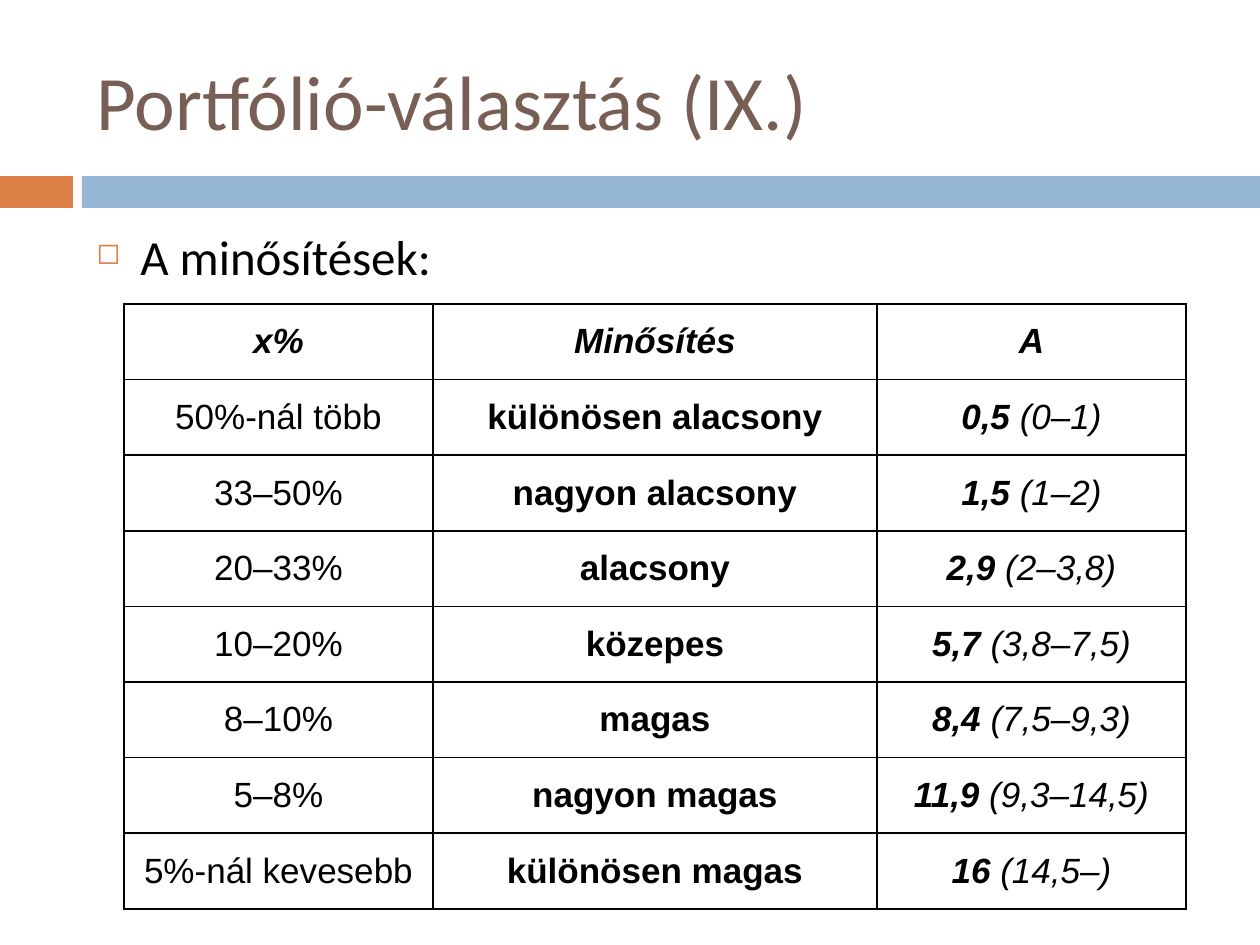
from dataclasses import dataclass
from lxml.etree import SubElement as Sub
from pptx import Presentation
from pptx.dml.color import RGBColor as RGB
from pptx.enum.shapes import MSO_SHAPE as Shape
from pptx.enum.text import MSO_ANCHOR as Anchor, PP_ALIGN as Align
from pptx.oxml.ns import qn
from pptx.util import Emu, Pt


@dataclass(frozen=True)
class Theme:
    orange: str = "DD8047"
    blue: str = "94B6D2"
    brown: str = "775F55"
    black: str = "000000"
    head: str = "Calibri"
    grid: str = "Arial"
    title: int = 44
    body: int = 28
    cell: int = 20


def px(num):
    return Emu(round(num * 914400 / 126))


def style(font, name, size, color):
    font.name = name
    font.size = Pt(size)
    font.color.rgb = RGB.from_string(color)


look = Theme()
deck = Presentation()
deck.slide_width, deck.slide_height = px(1260), px(945)
slide = deck.slides.add_slide(deck.slide_layouts[5])
shapes = slide.shapes

for left, width, color in [(0, 73, look.orange), (82, 1178, look.blue)]:
    bar = shapes.add_shape(Shape.RECTANGLE, px(left), px(176), px(width), px(32))
    bar.shadow.inherit = False
    bar.fill.solid()
    bar.fill.fore_color.rgb = RGB.from_string(color)
    bar.line.fill.background()

title = shapes.title
title.left, title.top, title.width, title.height = px(84), px(32), px(1124), px(136)
title.text_frame.text = "Portfólió-választás (IX.)"
title.text_frame.vertical_anchor = Anchor.MIDDLE
para = title.text_frame.paragraphs[0]
para.alignment = Align.LEFT
style(para.font, look.head, look.title, look.brown)

body = shapes.add_textbox(px(84), px(220), px(1124), px(620))
body.text_frame.word_wrap = True
para = body.text_frame.paragraphs[0]
para.text = "A minősítések:"
para.space_before = Pt(7)
style(para.font, look.head, look.body, look.black)
props = para._p.get_or_add_pPr()
props.set("marL", str(px(44)))
props.set("indent", str(-px(44)))
mark = Sub(Sub(props, qn("a:buClr")), qn("a:srgbClr"))
mark.set("val", look.orange)
Sub(props, qn("a:buSzPct")).set("val", "60000")
Sub(props, qn("a:buChar")).set("char", "◻")
props.append(props.find(qn("a:defRPr")))

rows = [
    ("x%", "Minősítés", "A", ""),
    ("50%-nál több", "különösen alacsony", "0,5", " (0–1)"),
    ("33–50%", "nagyon alacsony", "1,5", " (1–2)"),
    ("20–33%", "alacsony", "2,9", " (2–3,8)"),
    ("10–20%", "közepes", "5,7", " (3,8–7,5)"),
    ("8–10%", "magas", "8,4", " (7,5–9,3)"),
    ("5–8%", "nagyon magas", "11,9", " (9,3–14,5)"),
    ("5%-nál kevesebb", "különösen magas", "16", " (14,5–)"),
]
table = shapes.add_table(len(rows), 3, px(124), px(304), px(1062), px(605)).table
for col, width in zip(table.columns, (309, 444, 309)):
    col.width = px(width)

for r, (share, grade, value, span) in enumerate(rows):
    for c, text in enumerate((share, grade, value)):
        cell = table.cell(r, c)
        cell.vertical_anchor = Anchor.MIDDLE
        para = cell.text_frame.paragraphs[0]
        para.alignment = Align.CENTER
        style(para.font, look.grid, look.cell, look.black)
        para.font.italic = r == 0 or c == 2
        run = para.add_run()
        run.text = text
        run.font.bold = r == 0 or c > 0
        if c == 2 and span:
            run = para.add_run()
            run.text = span
            run.font.bold = False
        props = cell._tc.get_or_add_tcPr()
        for side in ("lnL", "lnR", "lnT", "lnB"):
            line = Sub(props, qn(f"a:{side}"))
            line.set("w", str(Pt(1)))
            fill = Sub(line, qn("a:solidFill"))
            Sub(fill, qn("a:srgbClr")).set("val", look.black)
        cell.fill.background()

deck.save("out.pptx")
